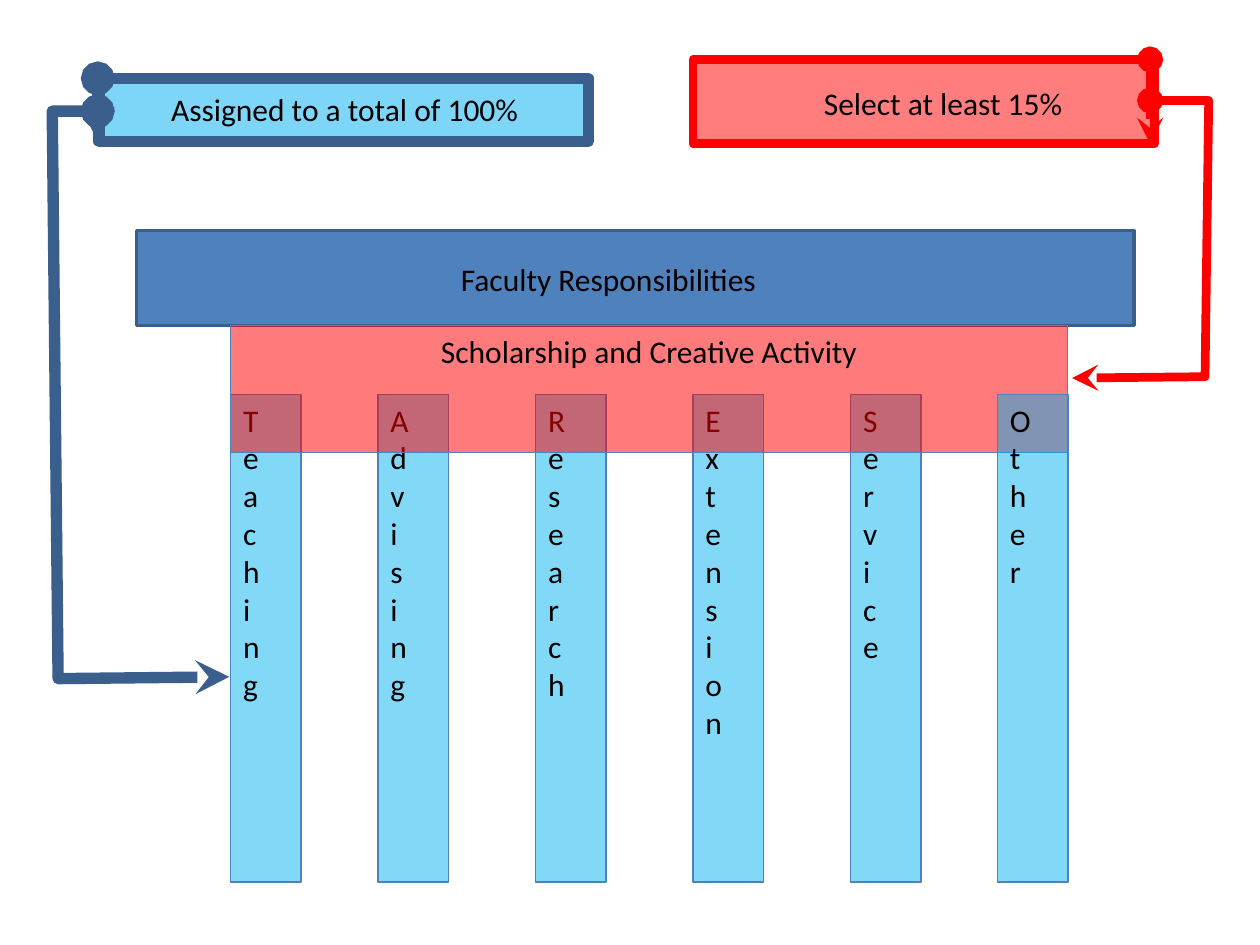
from pptx import Presentation
from pptx.dml.color import RGBColor
from pptx.enum.shapes import MSO_SHAPE
from pptx.enum.text import MSO_ANCHOR, PP_ALIGN
from pptx.oxml.ns import qn
from pptx.util import Cm, Pt
from lxml.etree import SubElement

COLOURS = {
    "sky": "00B0F0",
    "red": "FF0000",
    "blue": "4F81BD",
    "navy": "3A5F8C",
    "ink": "000000",
}


class Diagram:
    """Holds the text style and the current page."""

    font = {"name": "Calibri", "size": Pt(18)}
    frame = {"word_wrap": True, "vertical_anchor": MSO_ANCHOR.TOP}

    def __init__(self, page):
        self.page = page

    def colour(self, name):
        return RGBColor.from_string(COLOURS[name])

    def caption(self, box, text, align=PP_ALIGN.LEFT, **changes):
        for key, value in {**self.frame, **changes}.items():
            setattr(box.text_frame, key, value)
        para = box.text_frame.paragraphs[0]
        para.alignment = align
        span = para.add_run()
        span.text = text
        for key, value in self.font.items():
            setattr(span.font, key, value)
        span.font.color.rgb = self.colour("ink")

    def shape(self, kind, place, fill, line, width, opacity=100):
        box = self.page.shapes.add_shape(kind, *map(Cm, place))
        box.shadow.inherit = False
        box.fill.solid()
        box.fill.fore_color.rgb = self.colour(fill)
        if opacity < 100:
            tint = box.element.spPr.find(qn("a:solidFill"))[0]
            SubElement(tint, qn("a:alpha"), val=str(opacity * 1000))
        box.line.color.rgb = self.colour(line)
        box.line.width = Pt(width)
        return box

    def bar(self, *style, **options):
        return self.shape(MSO_SHAPE.RECTANGLE, *style, **options)

    def callout(self, place, fill, line, width, bends):
        kind = MSO_SHAPE.LINE_CALLOUT_3_BORDER_AND_ACCENT_BAR
        box = self.shape(kind, place, fill, line, width, opacity=51)
        for index, bend in enumerate(bends):
            box.adjustments[index] = bend
        outline = box.element.spPr.find(qn("a:ln"))
        for end, style in (("headEnd", "oval"), ("tailEnd", "stealth")):
            SubElement(outline, qn(f"a:{end}"), type=style)

    def pillar(self, left, text):
        box = self.bar((left, 7.95, 1.42, 9.83), "sky", "blue", 0.75, opacity=49)
        self.caption(box, text)
        box.element.txBody.bodyPr.set("vert", "wordArtVert")

    def label(self, place, text):
        box = self.page.shapes.add_textbox(*map(Cm, place))
        self.caption(box, text, word_wrap=False)


def main():
    deck = Presentation()
    deck.slide_width, deck.slide_height = Cm(25.4), Cm(19.05)
    diagram = Diagram(deck.slides.add_slide(deck.slide_layouts[6]))

    # Callouts with bent arrows: bends are y, x pairs relative to the box
    diagram.callout((13.97, 1.2, 9.3, 1.7), "red", "red", 5,
                    (0.486, 0.991, 0.486, 1.118, 3.762, 1.11, 3.778, 0.822))
    diagram.callout((2, 1.58, 9.86, 1.27), "sky", "navy", 6.5,
                    (0.521, -0.003, 0.521, -0.096, 9.529, -0.084, 9.5, 0.266))

    # Pillars behind the beam
    pillars = {"Teaching": 4.65, "Advising": 7.62, "Research": 10.8,
               "Extension": 13.97, "Service": 17.15}
    for text, left in pillars.items():
        diagram.pillar(left, text)

    # Roof and beam
    diagram.bar((2.75, 4.65, 20.11, 1.91), "blue", "navy", 2)
    beam = diagram.bar((4.65, 6.56, 16.87, 2.56), "red", "blue", 0.75, opacity=52)
    diagram.caption(beam, "Scholarship and Creative Activity", PP_ALIGN.CENTER)

    # Last pillar stands in front of the beam
    diagram.pillar(20.11, "Other")

    # Labels
    diagram.label((9.04, 5.11, 6.53, 1.02), "Faculty Responsibilities")
    diagram.label((3.2, 1.7, 7.59, 1.02), "Assigned to a total of 100%")
    diagram.label((16.36, 1.57, 5.38, 1.02), "Select at least 15%")

    deck.save("out.pptx")


if __name__ == "__main__":
    main()
